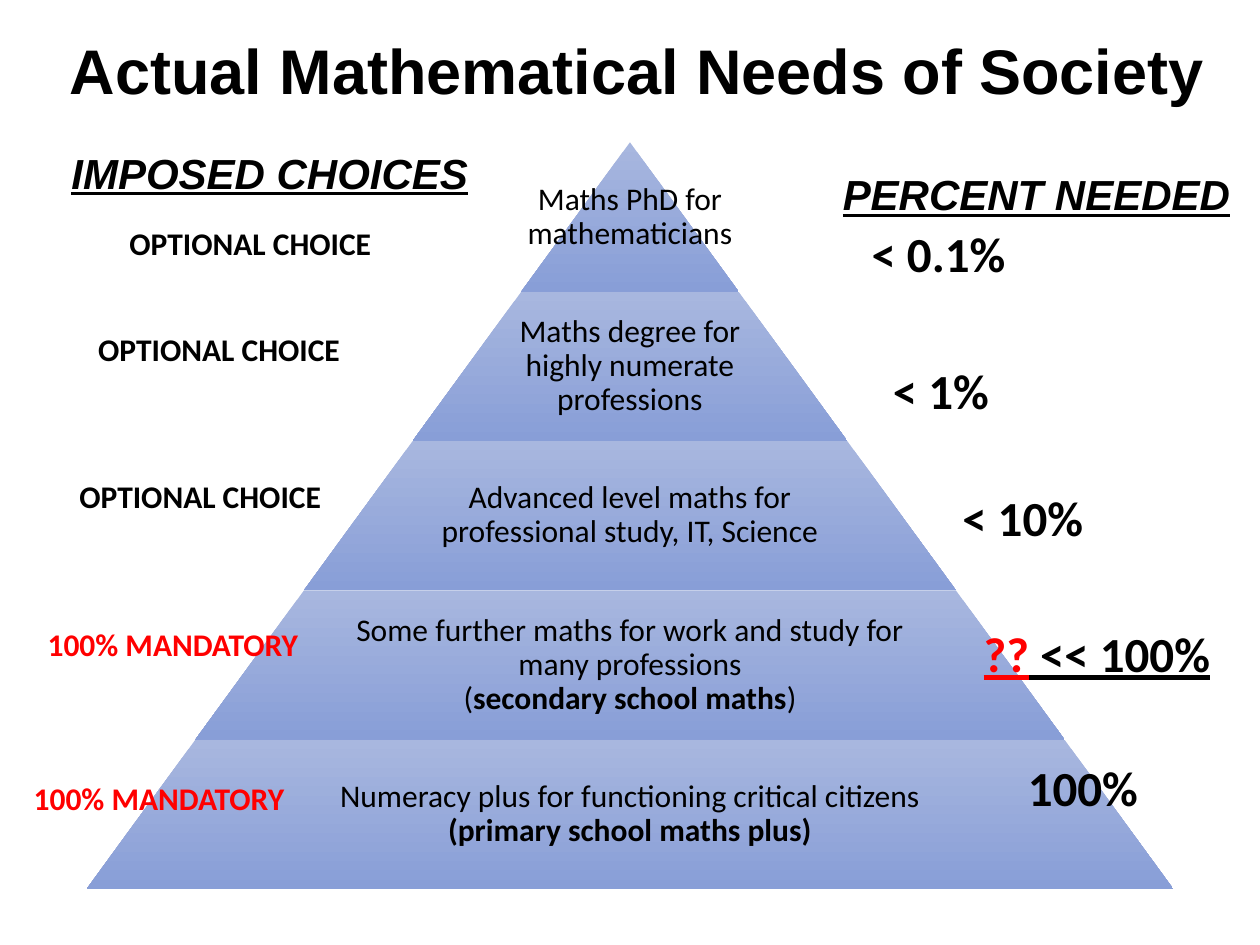
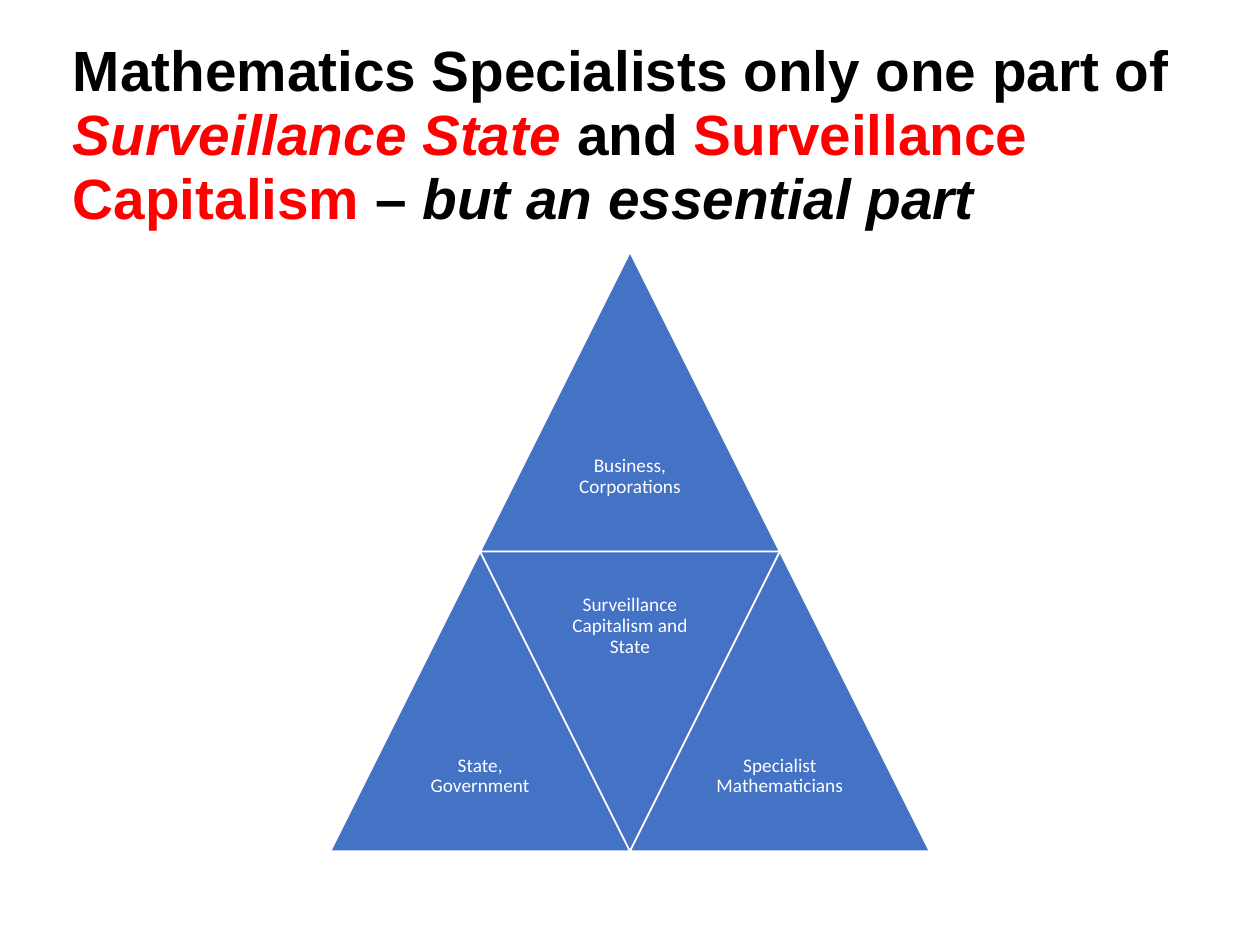
from dataclasses import dataclass

from pptx import Presentation
from pptx.dml.color import RGBColor
from pptx.enum.shapes import MSO_SHAPE
from pptx.enum.text import MSO_ANCHOR, PP_ALIGN
from pptx.util import Cm, Pt

TRAPEZOID = MSO_SHAPE.TRAPEZOID
TRIANGLE = MSO_SHAPE.ISOSCELES_TRIANGLE
TOP, MIDDLE = MSO_ANCHOR.TOP, MSO_ANCHOR.MIDDLE
LEFT, CENTER = PP_ALIGN.LEFT, PP_ALIGN.CENTER

SLIDE_W, SLIDE_H = 25.4, 19.05
BLANK_LAYOUT = 6


@dataclass(frozen=True)
class Theme:
    """Colours, fonts and type sizes shared by the slides."""

    black: str = "000000"
    white: str = "FFFFFF"
    red: str = "FF0000"
    blue: str = "4472C4"
    band_top: str = "A8B7DF"
    band_bottom: str = "889ED7"
    head_font: str = "Arial"
    body_font: str = "Calibri"
    title: float = 36
    long_title: float = 32.4
    heading: float = 24
    percent: float = 28
    body: float = 18
    small: float = 11


T = Theme()
TITLE = {"name": T.head_font, "size": Pt(T.title), "bold": True}
LONG_TITLE = {**TITLE, "size": Pt(T.long_title)}
HEADING = {**TITLE, "size": Pt(T.heading), "italic": True, "underline": True}
BODY = {"name": T.body_font, "size": Pt(T.body)}
LABEL = {**BODY, "bold": True}
PERCENT = {**LABEL, "size": Pt(T.percent)}
SMALL = {**BODY, "size": Pt(T.small), "color": T.white}

BOLD, RED = {"bold": True}, {"color": T.red}
ITALIC, UNDERLINE = {"italic": True}, {"underline": True}

PYRAMID_TOP, LEVEL_H, LEVEL_STEP, LEVEL_SLOPE = 2.87, 3.01, 4.38, 0.728
LEVELS = [
    [[("Maths PhD for mathematicians", {})]],
    [[("Maths degree for highly numerate professions", {})]],
    [[("Advanced level maths for professional study, IT, Science", {})]],
    [[("Some further maths for work and study for many professions", {})],
     [("(", {}), ("secondary school maths", BOLD), (")", {})]],
    [[("Numeracy plus for functioning critical citizens", {})],
     [("(primary school maths plus)", BOLD)]],
]
HEADINGS = [
    (1.19, 2.84, "IMPOSED CHOICES"),
    (16.74, 3.28, "PERCENT NEEDED"),
]
CHOICES = [
    (2.36, 4.39, "OPTIONAL CHOICE", {}),
    (1.73, 6.53, "OPTIONAL CHOICE", {}),
    (1.35, 9.5, "OPTIONAL CHOICE", {}),
    (0.71, 12.47, "100% MANDATORY", RED),
    (0.43, 15.57, "100% MANDATORY", RED),
]
PERCENTS = [
    (17.32, 4.39, [("< 0.1%", {})]),
    (17.75, 7.14, [("< 1%", {})]),
    (19.15, 9.7, [("< 10%", {})]),
    (19.58, 12.45, [("??", {**UNDERLINE, **RED}), (" << 100%", UNDERLINE)]),
    (20.47, 15.14, [("100%", {})]),
]

SIDE, APEX_LEFT, APEX_TOP = 6.04, 9.68, 5.08
TRIANGLES = [
    (0, 0, False, "Business, Corporations"),
    (-0.5, 1, False, "State, Government"),
    (0, 1, True, "Surveillance Capitalism and State"),
    (0.5, 1, False, "Specialist Mathematicians"),
]
SPECIALISTS_TITLE = [
    ("Mathematics Specialists only one part of ", {}),
    ("Surveillance State ", {**RED, **ITALIC}),
    ("and ", {}),
    ("Surveillance Capitalism", RED),
    (" – ", {}),
    ("but an essential part", ITALIC),
]


def add_run(p, text, style):
    """Add a run to a paragraph and apply its font values."""
    r = p.add_run()
    r.text = text
    font = {**style}
    r.font.color.rgb = RGBColor.from_string(font.pop("color", T.black))
    for key, value in font.items():
        setattr(r.font, key, value)


def add_text(s, box, paragraphs, style, align=LEFT, anchor=TOP,
             spacing=1.0, inset=None):
    """Add a wrapping text box made of paragraphs of styled runs."""
    sp = s.shapes.add_textbox(*map(Cm, box))
    tf = sp.text_frame
    tf.word_wrap = True
    tf.vertical_anchor = anchor
    if inset is not None:
        for side in ("left", "top", "right", "bottom"):
            setattr(tf, f"margin_{side}", Cm(inset))
    for i, runs in enumerate(paragraphs):
        p = tf.add_paragraph() if i else tf.paragraphs[0]
        p.alignment = align
        p.line_spacing = spacing
        for text, extra in runs:
            add_run(p, text, {**style, **extra})


def add_level(s, index, paragraphs):
    """Add one gradient level of the pyramid with its caption."""
    width = LEVEL_STEP * (index + 1)
    top = PYRAMID_TOP + LEVEL_H * index
    box = ((SLIDE_W - width) / 2, top, width, LEVEL_H)
    sp = s.shapes.add_shape(TRAPEZOID, *map(Cm, box))
    sp.shadow.inherit = False
    sp.adjustments[0] = LEVEL_SLOPE
    sp.line.fill.background()
    sp.fill.gradient()
    sp.fill.gradient_angle = 270
    for stop, color in zip(sp.fill.gradient_stops, (T.band_top, T.band_bottom)):
        stop.color.rgb = RGBColor.from_string(color)
    text_w = width * 0.65 if index else width
    add_text(s, ((SLIDE_W - text_w) / 2, top, text_w, LEVEL_H), paragraphs,
             BODY, CENTER, MIDDLE, 0.9, 0.08)


def add_triangle(s, column, row, inverted, text):
    """Add one triangle of the large triangle with its caption."""
    left, top = APEX_LEFT + column * SIDE, APEX_TOP + row * SIDE
    sp = s.shapes.add_shape(TRIANGLE, *map(Cm, (left, top, SIDE, SIDE)))
    sp.shadow.inherit = False
    sp.rotation = 180 if inverted else 0
    sp.fill.solid()
    sp.fill.fore_color.rgb = RGBColor.from_string(T.blue)
    sp.line.color.rgb = RGBColor.from_string(T.white)
    sp.line.width = Pt(1)
    half = SIDE / 2
    box = (left + half / 2, top if inverted else top + half, half, half)
    add_text(s, box, [[(text, {})]], SMALL, CENTER, MIDDLE, 0.9, 0.13)


def build_needs(s):
    """Build the pyramid of mathematical needs."""
    add_text(s, (0.97, 0.56, 23.75, 1.88),
             [[("Actual Mathematical Needs of Society", {})]],
             TITLE, CENTER, MIDDLE, 0.9)
    for i, paragraphs in enumerate(LEVELS):
        add_level(s, i, paragraphs)
    for left, top, text in HEADINGS:
        add_text(s, (left, top, 8.66, 1.27), [[(text, {})]], HEADING)
    for left, top, text, extra in CHOICES:
        add_text(s, (left, top, 6, 1.02), [[(text, extra)]], LABEL)
    for left, top, runs in PERCENTS:
        add_text(s, (left, top, SLIDE_W - left, 1.45), [runs], PERCENT)


def build_specialists(s):
    """Build the triangle of business, state and specialists."""
    add_text(s, (1.22, 0.69, 23.22, 4), [SPECIALISTS_TITLE], LONG_TITLE,
             spacing=0.94)
    for triangle in TRIANGLES:
        add_triangle(s, *triangle)


def main():
    """Build and save the presentation."""
    prs = Presentation()
    prs.slide_width, prs.slide_height = Cm(SLIDE_W), Cm(SLIDE_H)
    for build in (build_needs, build_specialists):
        build(prs.slides.add_slide(prs.slide_layouts[BLANK_LAYOUT]))
    prs.save("out.pptx")


if __name__ == "__main__":
    main()
